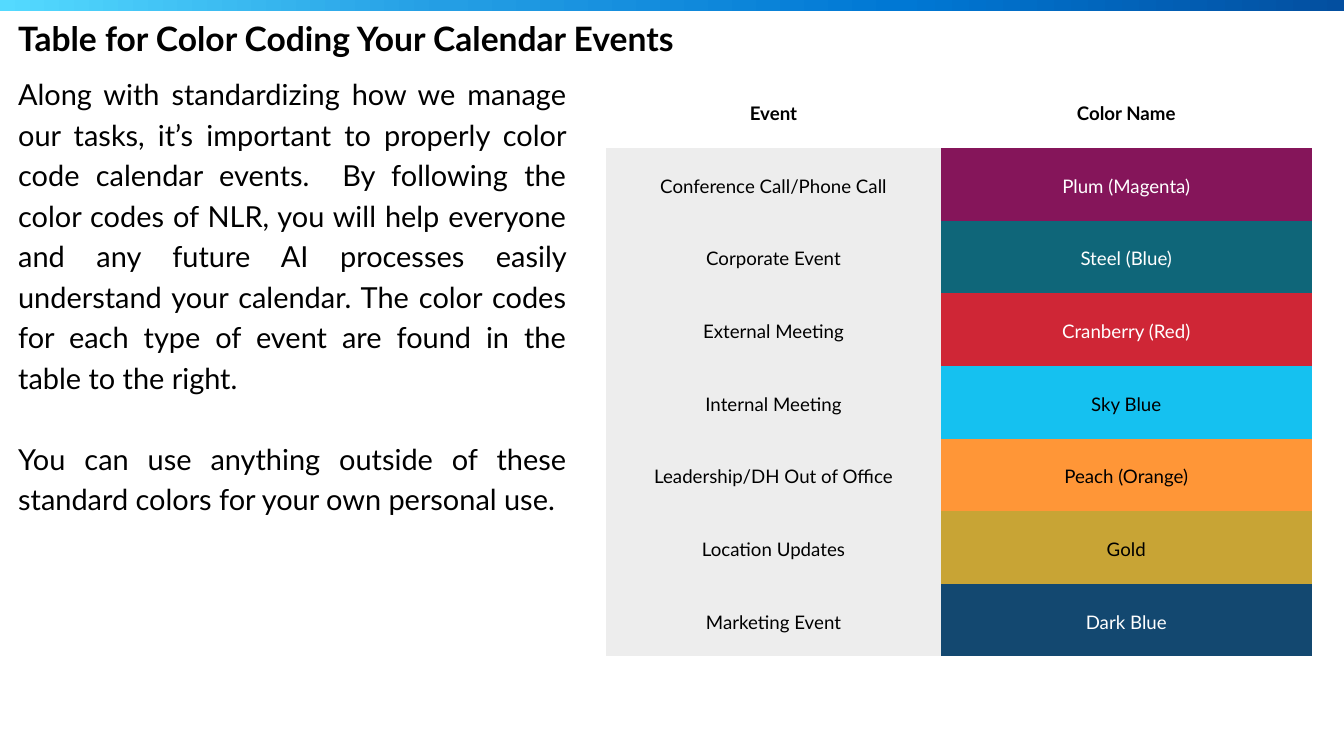
from lxml.etree import SubElement
from pptx import Presentation
from pptx.dml.color import RGBColor
from pptx.enum.shapes import MSO_SHAPE as Shape
from pptx.enum.text import MSO_ANCHOR as Anchor, PP_ALIGN as Align
from pptx.oxml.ns import qn
from pptx.util import Inches, Pt

FONT = "Lato"
BLACK, WHITE, GREY = "000000", "FFFFFF", "EDEDED"

TITLE = "Table for Color Coding Your Calendar Events"
BODY = [
    "Along with standardizing how we manage our tasks, it’s important to properly "
    "color code calendar events.  By following the color codes of NLR, you will help "
    "everyone and any future AI processes easily understand your calendar. The color "
    "codes for each type of event are found in the table to the right.",
    "You can use anything outside of these standard colors for your own personal use.",
]
HEADINGS = ("Event", "Color Name")
# event, color name, fill, text color
EVENTS = [
    ("Conference Call/Phone Call", "Plum (Magenta)", "85155A", WHITE),
    ("Corporate Event", "Steel (Blue)", "0F6679", WHITE),
    ("External Meeting", "Cranberry (Red)", "CF2636", WHITE),
    ("Internal Meeting", "Sky Blue", "15C1F0", BLACK),
    ("Leadership/DH Out of Office", "Peach (Orange)", "FF9637", BLACK),
    ("Location Updates", "Gold", "C8A435", BLACK),
    ("Marketing Event", "Dark Blue", "134870", WHITE),
]
BAR_STOPS = [(0, "54DAFF"), (33, "249EE4"), (67, "0078D4"), (100, "034FA0")]
COLUMN_WIDTHS = (4.98, 5.52)
TABLE_HEIGHT = 8.65
CELL_MARGIN = 0.21


def rgb(color):
    return RGBColor.from_string(color)


def set_margins(holder, margin):
    holder.margin_left = holder.margin_right = Inches(margin)
    holder.margin_top = holder.margin_bottom = Inches(margin)


def format_paragraph(paragraph, size, color=BLACK, bold=False, align=Align.LEFT):
    """Style a paragraph; line spacing is always 1.4 times the text size."""
    paragraph.alignment = align
    paragraph.line_spacing = Pt(size * 1.4)
    for run in paragraph.runs:
        run.font.name = FONT
        run.font.size = Pt(size)
        run.font.bold = bold
        run.font.color.rgb = rgb(color)


def add_text(slide, box, text, size, **style):
    frame = slide.shapes.add_textbox(*map(Inches, box)).text_frame
    frame.word_wrap = True
    set_margins(frame, 0)
    frame.text = text
    for paragraph in frame.paragraphs:
        format_paragraph(paragraph, size, **style)
    return frame


def add_gradient_bar(slide, box, stops):
    bar = slide.shapes.add_shape(Shape.RECTANGLE, *map(Inches, box))
    bar.shadow.inherit = False
    bar.line.fill.background()
    bar.fill.gradient()
    bar.fill.gradient_angle = 0
    stop_list = next(bar._element.iter(qn("a:gsLst")))
    for stop in list(stop_list):
        stop_list.remove(stop)
    for percent, color in stops:
        stop = SubElement(stop_list, qn("a:gs"), pos=str(percent * 1000))
        SubElement(stop, qn("a:srgbClr"), val=color)


def fill_cell(cell, text, fill, color=BLACK, bold=False):
    cell.text = text
    cell.vertical_anchor = Anchor.MIDDLE
    set_margins(cell, CELL_MARGIN)
    format_paragraph(cell.text_frame.paragraphs[0], 20, color, bold, Align.CENTER)
    properties = cell._tc.get_or_add_tcPr()
    for side in ("lnL", "lnR", "lnT", "lnB"):
        border = SubElement(properties, qn(f"a:{side}"), w="0")
        SubElement(border, qn("a:noFill"))
    cell.fill.solid()
    cell.fill.fore_color.rgb = rgb(fill)


def add_event_table(slide, left, top):
    row_count = len(EVENTS) + 1
    table = slide.shapes.add_table(
        row_count, len(HEADINGS), Inches(left), Inches(top),
        Inches(sum(COLUMN_WIDTHS)), Inches(TABLE_HEIGHT)).table
    table.first_row = table.horz_banding = False
    for column, width in zip(table.columns, COLUMN_WIDTHS):
        column.width = Inches(width)
    for row in table.rows:
        row.height = Inches(TABLE_HEIGHT / row_count)
    for column, heading in enumerate(HEADINGS):
        fill_cell(table.cell(0, column), heading, WHITE, bold=True)
    for row, (event, name, fill, color) in enumerate(EVENTS, start=1):
        fill_cell(table.cell(row, 0), event, GREY)
        fill_cell(table.cell(row, 1), name, fill, color)


def main():
    presentation = Presentation()
    presentation.slide_width = Inches(20)
    presentation.slide_height = Inches(11.25)
    slide = presentation.slides.add_slide(presentation.slide_layouts[6])

    body = add_text(slide, (0.27, 1.06, 8.15, 7.1), "\n".join(BODY), 31,
                    align=Align.JUSTIFY)
    body.paragraphs[1].space_before = Pt(43.4)
    add_gradient_bar(slide, (0, 0, 20, 0.17), BAR_STOPS)
    add_event_table(slide, 9.02, 1.12)
    add_text(slide, (0.27, 0.17, 16.92, 0.67), TITLE, 36, bold=True)

    presentation.save("out.pptx")


if __name__ == "__main__":
    main()
